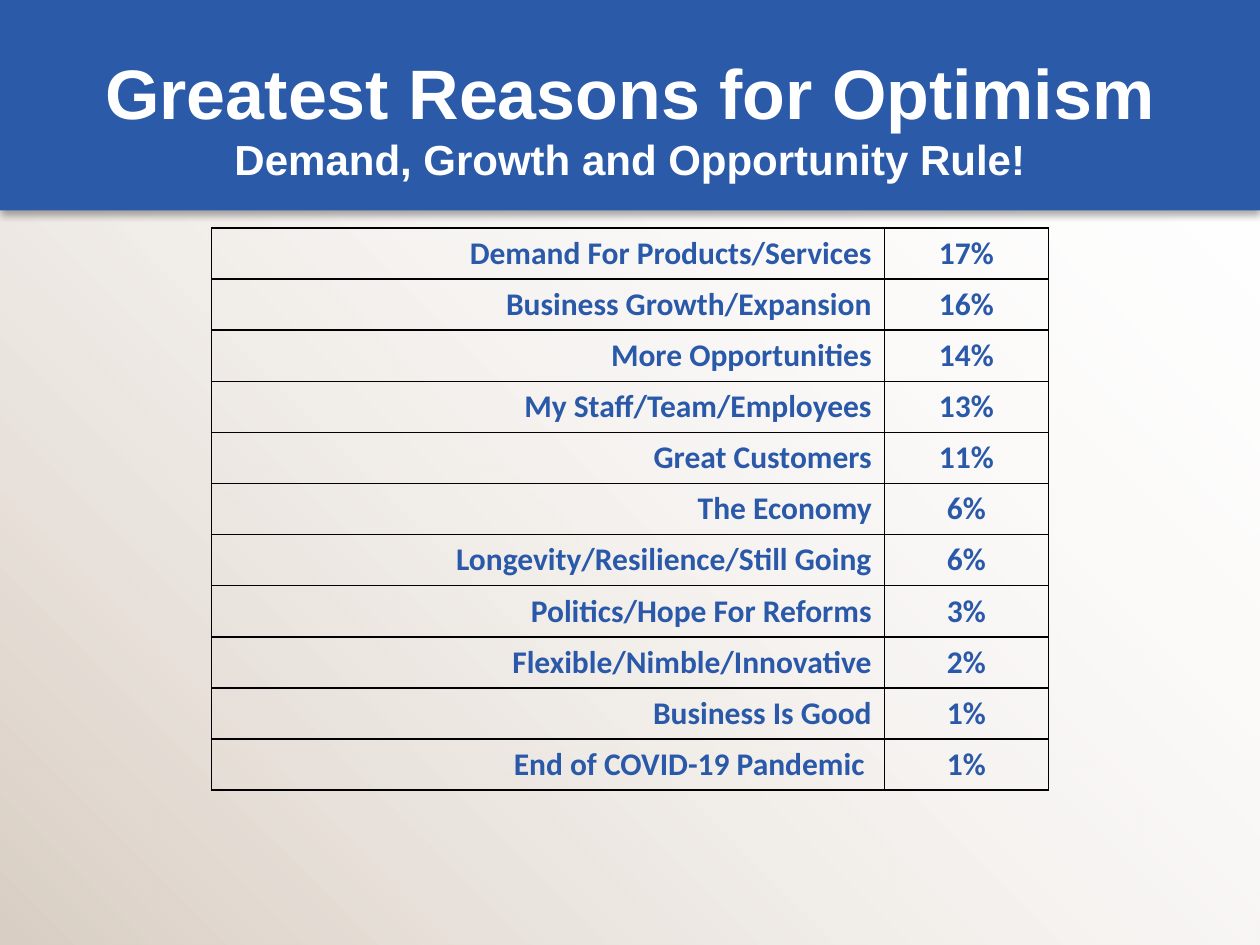
"""Build the slide on the greatest reasons for optimism."""
from lxml.etree import SubElement
from pptx import Presentation
from pptx.dml.color import RGBColor
from pptx.enum.shapes import MSO_SHAPE as Shape
from pptx.enum.text import MSO_ANCHOR as Anchor, MSO_AUTO_SIZE as AutoSize, PP_ALIGN as Align
from pptx.oxml import parse_xml
from pptx.oxml.ns import nsdecls, qn
from pptx.util import Inches, Pt

COLORS = {"sand": "DACFC4", "white": "FFFFFF", "band": "2B5AA9", "text": "2B59A9", "line": "000000"}
REASONS = [
    ("Demand For Products/Services", "17%"),
    ("Business Growth/Expansion", "16%"),
    ("More Opportunities", "14%"),
    ("My Staff/Team/Employees", "13%"),
    ("Great Customers", "11%"),
    ("The Economy", "6%"),
    ("Longevity/Resilience/Still Going", "6%"),
    ("Politics/Hope For Reforms", "3%"),
    ("Flexible/Nimble/Innovative", "2%"),
    ("Business Is Good", "1%"),
    ("End of COVID-19 Pandemic ", "1%"),
]
COLUMNS = [(5.34, Align.RIGHT), (1.3, Align.CENTER)]
ROW_HEIGHT = 0.4


def color(name):
    return RGBColor.from_string(COLORS[name])


prs = Presentation()
prs.slide_width, prs.slide_height = Inches(10), Inches(7.5)
slide = prs.slides.add_slide(prs.slide_layouts[5])
shapes = slide.shapes

backdrop = shapes.add_shape(Shape.RECTANGLE, 0, 0, prs.slide_width, prs.slide_height)
backdrop.shadow.inherit = False
backdrop.line.fill.background()
backdrop.fill.gradient()
backdrop.fill.gradient_angle = 45
for stop, name, position in zip(backdrop.fill.gradient_stops, ("sand", "white"), (0, 1)):
    stop.color.rgb = color(name)
    stop.position = position
clear_end = backdrop._element.spPr.findall(".//" + qn("a:srgbClr"))[-1]
SubElement(clear_end, qn("a:alpha"), val="0")

band = shapes.add_shape(Shape.RECTANGLE, 0, 0, prs.slide_width, Inches(1.67))
band.shadow.inherit = False
band.line.fill.background()
band.fill.solid()
band.fill.fore_color.rgb = color("band")
band._element.spPr.find(qn("a:effectLst")).append(parse_xml(
    f'<a:outerShdw {nsdecls("a")} blurRad="{Pt(4)}" dist="{Pt(2.2)}" dir="5400000" rotWithShape="0">'
    f'<a:srgbClr val="{COLORS["line"]}"><a:alpha val="32000"/></a:srgbClr></a:outerShdw>'))

title = shapes.title
shapes._spTree.append(title._element)
title.left, title.top, title.width, title.height = map(Inches, (0.5, 0.3, 9, 1.25))
frame = title.text_frame
frame.auto_size = AutoSize.NONE
frame.vertical_anchor = Anchor.MIDDLE
frame.margin_left = frame.margin_right = frame.margin_top = frame.margin_bottom = Inches(0.05)
heading = frame.paragraphs[0]
heading.alignment = Align.CENTER
for text, size in (("Greatest Reasons for Optimism", 40), ("Demand, Growth and Opportunity Rule!", 24)):
    if heading.runs:
        heading.add_line_break()
    run = heading.add_run()
    run.text = text
    run.font.size = Pt(size)
    run.font.name = "Arial"
    run.font.bold = True
    run.font.color.rgb = color("white")

table = shapes.add_table(
    len(REASONS), len(COLUMNS), Inches(1.68), Inches(1.81),
    Inches(sum(width for width, _ in COLUMNS)), Inches(ROW_HEIGHT * len(REASONS))).table
table.first_row = table.horz_banding = False
for column, (width, _) in zip(table.columns, COLUMNS):
    column.width = Inches(width)
for row, reason in zip(table.rows, REASONS):
    row.height = Inches(ROW_HEIGHT)
    for cell, text, (_, alignment) in zip(row.cells, reason, COLUMNS):
        cell.text = text
        cell.vertical_anchor = Anchor.MIDDLE
        paragraph = cell.text_frame.paragraphs[0]
        paragraph.alignment = alignment
        paragraph.font.name = "Calibri"
        paragraph.font.size = Pt(18)
        paragraph.font.bold = True
        paragraph.font.color.rgb = color("text")
        properties = cell._tc.get_or_add_tcPr()
        for side in ("lnL", "lnR", "lnT", "lnB"):
            border = SubElement(properties, qn(f"a:{side}"), w=str(Pt(1)))
            fill = SubElement(border, qn("a:solidFill"))
            SubElement(fill, qn("a:srgbClr"), val=COLORS["line"])
        cell.fill.background()

prs.save("out.pptx")
